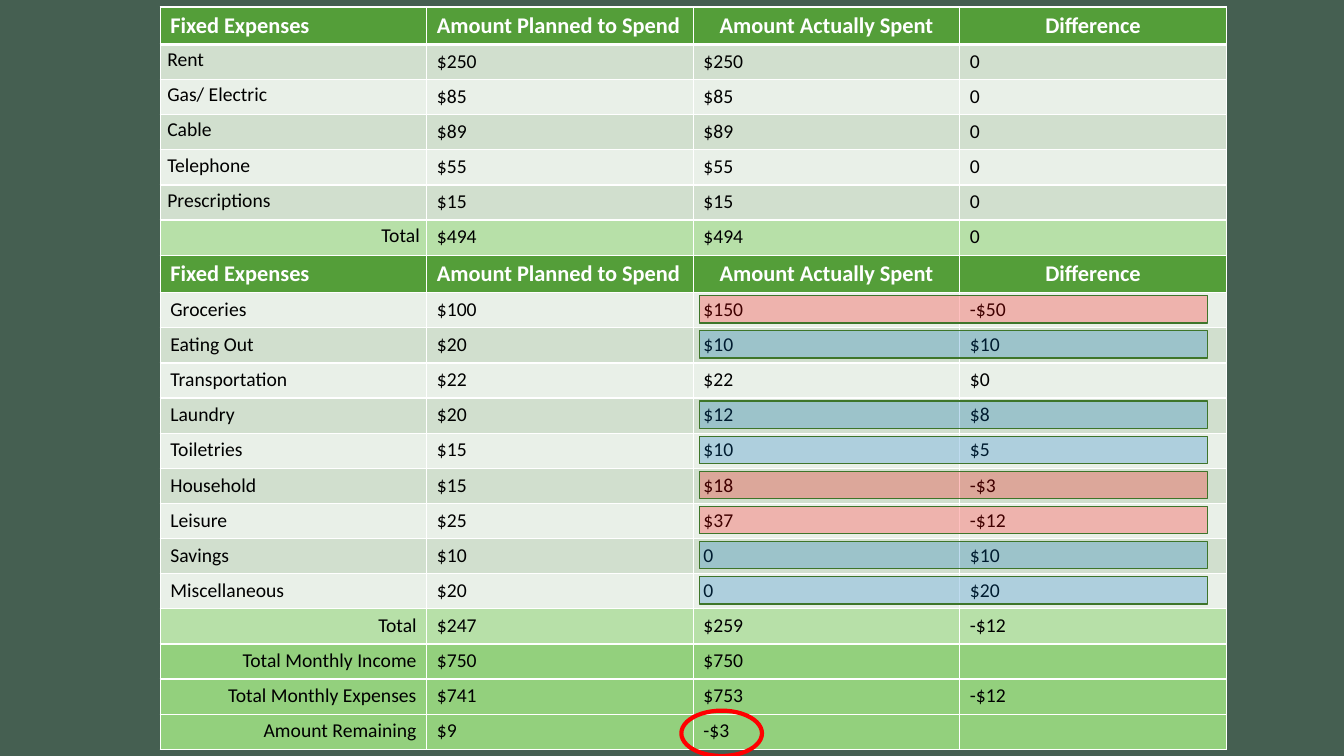
from dataclasses import dataclass

from lxml import etree
from pptx import Presentation
from pptx import util as u
from pptx.dml.color import RGBColor
from pptx.enum import shapes, text
from pptx.oxml import ns

Pt = u.Pt
LEFT, TOP, COL = 114.5, 5, 190.4
HEAD_H, ROW_H = 26.5, 25.1
WHITE, RED, BLUE, EDGE = "FFFFFF", "FF0000", "0070C0", "3E752A"
HEAD, TOTAL, FINAL = "549E39", "B7E0A8", "93D07D"
BANDS = ("E9F0E8", "D1DFCE")


@dataclass
class Row:
    cells: tuple[str, str, str, str]
    fill: str = ""  # empty: banded
    tint: str = ""  # colour of the highlight bar
    tight: bool = False  # label with small margins and wide line spacing


def head() -> Row:
    return Row(("Fixed Expenses", "Amount Planned to Spend",
                "Amount Actually Spent", "Difference"), HEAD)


ROWS = [
    head(),
    Row(("Rent", "$250", "$250", "0"), tight=True),
    Row(("Gas/ Electric", "$85", "$85", "0"), tight=True),
    Row(("Cable", "$89", "$89", "0"), tight=True),
    Row(("Telephone", "$55", "$55", "0"), tight=True),
    Row(("Prescriptions", "$15", "$15", "0"), tight=True),
    Row(("Total", "$494", "$494", "0"), TOTAL, tight=True),
    head(),
    Row(("Groceries", "$100", "$150", "-$50"), tint=RED),
    Row(("Eating Out", "$20", "$10", "$10"), tint=BLUE),
    Row(("Transportation", "$22", "$22", "$0")),
    Row(("Laundry", "$20", "$12", "$8"), tint=BLUE),
    Row(("Toiletries", "$15", "$10", "$5"), tint=BLUE),
    Row(("Household", "$15", "$18", "-$3"), tint=RED),
    Row(("Leisure", "$25", "$37", "-$12"), tint=RED),
    Row(("Savings", "$10", "0", "$10"), tint=BLUE),
    Row(("Miscellaneous", "$20", "0", "$20"), tint=BLUE),
    Row(("Total", "$247", "$259", "-$12"), TOTAL),
    Row(("Total Monthly Income", "$750", "$750", ""), FINAL),
    Row(("Total Monthly Expenses", "$741", "$753", "-$12"), FINAL),
    Row(("Amount Remaining", "$9", "-$3", ""), FINAL),
]


def color(code: str) -> RGBColor:
    return RGBColor.from_string(code)


def height(row: Row) -> float:
    return HEAD_H if row.fill == HEAD else ROW_H


def border(cell, side: str, width: float) -> None:
    line = etree.SubElement(cell._tc.get_or_add_tcPr(), ns.qn(f"a:ln{side}"),
                            w=str(Pt(width)))
    fill = etree.SubElement(line, ns.qn("a:solidFill"))
    etree.SubElement(fill, ns.qn("a:srgbClr"), val=WHITE)


def style(cell, row: Row, r: int, c: int) -> None:
    is_head = row.fill == HEAD
    for side in "LRTB":
        thick = (r == 0 and side == "B") or (r == 1 and side == "T")
        border(cell, side, 3 if thick else 1)
    cell.fill.solid()
    cell.fill.fore_color.rgb = color(row.fill or BANDS[r % 2])

    cell.text = row.cells[c]
    para = cell.text_frame.paragraphs[0]
    font = para.font
    font.name, font.size, font.bold = "Calibri", Pt(16 if is_head else 14), is_head
    font.color.rgb = color(WHITE if is_head else "000000")
    if is_head and c >= 2:
        para.alignment = text.PP_ALIGN.CENTER
    elif c == 0 and row.fill in (TOTAL, FINAL):
        para.alignment = text.PP_ALIGN.RIGHT
    if row.tight and c == 0:
        cell.margin_left = cell.margin_right = Pt(5)
        cell.margin_top = cell.margin_bottom = Pt(0)
        para.line_spacing = 1.15
        para.space_before = para.space_after = Pt(3)


def mark(slide, kind, box: tuple[float, ...], line: str, width: float,
         tint: str = "") -> None:
    shape = slide.shapes.add_shape(kind, *map(Pt, box))
    shape.shadow.inherit = False
    shape.line.color.rgb, shape.line.width = color(line), Pt(width)
    if not tint:
        shape.fill.background()
        return
    shape.fill.solid()
    shape.fill.fore_color.rgb = color(tint)
    paint = shape._element.spPr.find(ns.qn("a:solidFill"))
    etree.SubElement(paint[0], ns.qn("a:alpha"), val="25000")


def main() -> None:
    deck = Presentation()
    deck.slide_width, deck.slide_height = Pt(960), Pt(540)
    slide = deck.slides.add_slide(deck.slide_layouts[6])
    slide.background.fill.solid()
    slide.background.fill.fore_color.rgb = color("455F51")

    # Budget table
    total = sum(map(height, ROWS))
    table = slide.shapes.add_table(len(ROWS), 4, Pt(LEFT), Pt(TOP),
                                   Pt(4 * COL), Pt(total)).table
    for col in table.columns:
        col.width = Pt(COL)
    for r, row in enumerate(ROWS):
        table.rows[r].height = Pt(height(row))
        for c in range(4):
            style(table.cell(r, c), row, r, c)

    # Bars over the rows that are over or under budget
    top = TOP
    for row in ROWS:
        if row.tint:
            mark(slide, shapes.MSO_SHAPE.RECTANGLE, (499.5, top + 2.6, 363, 19.5),
                 EDGE, 0.85, row.tint)
        top += height(row)

    # Ring around the shortfall
    mark(slide, shapes.MSO_SHAPE.OVAL, (486.7, 507.6, 57.6, 32.4), RED, 3)

    deck.save("out.pptx")


if __name__ == "__main__":
    main()
